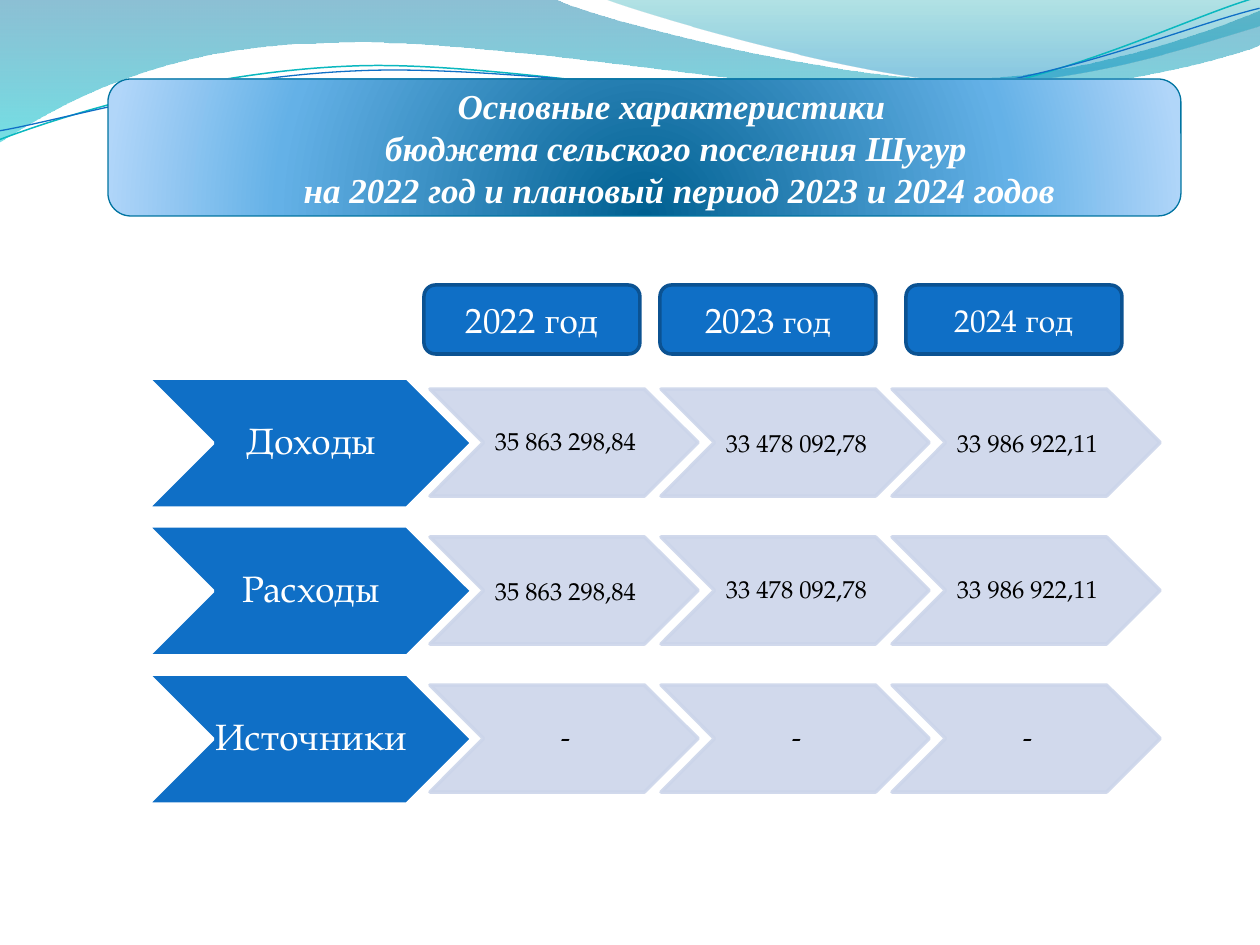
from lxml import etree
from pptx import Presentation
from pptx.dml.color import RGBColor
from pptx.enum.shapes import MSO_SHAPE
from pptx.enum.text import MSO_ANCHOR, PP_ALIGN
from pptx.oxml.ns import qn
from pptx.util import Pt

PX = 914400 / 126
CHEVRON, ROUNDED = MSO_SHAPE.CHEVRON, MSO_SHAPE.ROUNDED_RECTANGLE
CENTER, MIDDLE = PP_ALIGN.CENTER, MSO_ANCHOR.MIDDLE
BODY_FONT, TITLE_FONT = "TeX Gyre Pagella", "Times New Roman"

WHITE = RGBColor(0xFF, 0xFF, 0xFF)
BLACK = RGBColor(0x00, 0x00, 0x00)
BLUE = RGBColor(0x0F, 0x6F, 0xC6)
DARK_BLUE = RGBColor(0x0B, 0x52, 0x92)
PALE = RGBColor(0xCC, 0xD5, 0xEA)
TEAL_LINE = RGBColor(0x0A, 0xB8, 0xBF)
OCEAN = RGBColor(0x00, 0x74, 0xA1)
CYAN = RGBColor(0x00, 0xC6, 0xCF)
TEAL = RGBColor(0x00, 0xA1, 0xA9)
AZURE = RGBColor(0x00, 0x8B, 0xBF)
DEEP = RGBColor(0x00, 0x60, 0x91)
SKY = RGBColor(0x64, 0xB1, 0xE7)
MIST = RGBColor(0xB1, 0xD6, 0xF9)

# A pair of numbers is a corner; six numbers are a Bezier segment.
LARGE_WAVE = [(0, 0), (554, -1), (600, 21, 837, 79, 955, 79), (1075, 79, 1207, 33, 1260, 11),
              (1261, 45), (1239, 55, 1096, 96, 940, 95), (784, 95, 481, 35, 324, 43),
              (163, 45, 58, 105, -1, 142)]
SMALL_WAVE = [(604, -1), (641, 14, 859, 78, 969, 82), (1079, 86, 1211, 40, 1260, 26), (1260, 0)]
# The curves are laid out level and then turned by CURVE_TURN degrees.
CURVE_TURN = 357.3
TEAL_CURVE = [(-3, 110), (59, 90, 199, 52, 350, 53), (499, 53, 745, 118, 896, 114),
              (1048, 109, 1184, 45, 1260, 27)]
BLUE_CURVE = [(-2, 101), (57, 94, 207, 57, 357, 58), (509, 58, 750, 112, 902, 108),
              (1052, 104, 1188, 52, 1262, 38)]

YEARS = [(424, [("2022 год", 20)]), (660, [("2023", 20), (" год", 18)]), (906, [("2024 год", 18)])]
# Each row: label, values, text size, downward shift of each value.
ROWS = [
    ("Доходы", ["35 863 298,84", "33 478 092,78", "33 986 922,11"], 14, (0, 2, 2)),
    ("Расходы", ["35 863 298,84", "33 478 092,78", "33 986 922,11"], 14, (2, 0, 0)),
    ("Источники", ["-", "-", "-"], 16, (0, 0, 0)),
]
TITLE = [("Основные характеристики", 54), ("бюджета сельского поселения Шугур", 63),
         ("на 2022 год и плановый период 2023 и 2024 годов", 70)]


def emu(px):
    return round(px * PX)


def add_color(parent, color, alpha=100):
    element = etree.SubElement(parent, qn("a:srgbClr"), val=str(color))
    if alpha < 100:
        etree.SubElement(element, qn("a:alpha"), val=str(alpha * 1000))


def fill_gradient(shape, stops):
    """Set (position, colour, opacity) stops and return the gradient element."""
    shape.fill.gradient()
    gradient = shape._element.spPr.find(qn("a:gradFill"))
    for child in list(gradient):
        gradient.remove(child)
    stop_list = etree.SubElement(gradient, qn("a:gsLst"))
    for position, color, alpha in stops:
        stop = etree.SubElement(stop_list, qn("a:gs"), pos=str(position * 1000))
        add_color(stop, color, alpha)
    return gradient


def add_outline(page, segments, closed):
    """Draw straight segments, then join each Bezier triple into one curve."""
    points = [(emu(segment[i]), emu(segment[i + 1]))
              for segment in segments for i in range(0, len(segment), 2)]
    builder = page.shapes.build_freeform(*points[0])
    builder.add_line_segments(points[1:], close=closed)
    shape = builder.convert_to_shape()
    shape.shadow.inherit = False
    lines = iter(list(shape._element.iter(qn("a:lnTo"))))
    for segment in segments[1:]:
        first = next(lines)
        if len(segment) == 6:
            curve = etree.Element(qn("a:cubicBezTo"))
            first.addprevious(curve)
            for line in (first, next(lines), next(lines)):
                curve.append(line[0])
                line.getparent().remove(line)
    return shape


def add_waves(page):
    for segments, stops in (
        (LARGE_WAVE, [(0, OCEAN, 45), (100, CYAN, 55)]),
        (SMALL_WAVE, [(0, TEAL, 30), (80, AZURE, 45)]),
    ):
        wave = add_outline(page, segments, True)
        wave.line.fill.background()
        gradient = fill_gradient(wave, stops)
        etree.SubElement(gradient, qn("a:lin"), ang="5400000", scaled="0")
    for segments, color, width in ((TEAL_CURVE, TEAL_LINE, 0.85), (BLUE_CURVE, BLUE, 0.75)):
        curve = add_outline(page, segments, False)
        curve.rotation = CURVE_TURN
        curve.fill.background()
        curve.line.color.rgb = color
        curve.line.width = Pt(width)


def add_box(page, kind, box, fill, line, width=2):
    shape = page.shapes.add_shape(kind, *map(emu, box))
    shape.shadow.inherit = False
    if fill is not None:
        shape.fill.solid()
        shape.fill.fore_color.rgb = fill
    shape.line.color.rgb = line
    shape.line.width = Pt(width)
    shape.text_frame.vertical_anchor = MIDDLE
    return shape


def write(para, spans, color):
    para.alignment = CENTER
    para.font.name = BODY_FONT
    para.font.color.rgb = color
    for text, size in spans:
        span = para.add_run()
        span.text = text
        span.font.size = Pt(size)


def add_chevron(page, box, text, size, fill, line, color, shift=0):
    shape = add_box(page, CHEVRON, box, fill, line)
    frame = shape.text_frame
    frame.word_wrap = False
    frame.margin_left = emu(3)
    frame.margin_right = 0
    frame.margin_top = emu(1 + 2 * shift)
    frame.margin_bottom = emu(1)
    write(frame.paragraphs[0], [(text, size)], color)
    frame.paragraphs[0].line_spacing = 0.9
    return shape


def add_row(page, left, top, label, values, size, shifts):
    add_chevron(page, (left, top, 324, 130), label, 21, BLUE, WHITE, WHITE)
    for column, (value, shift) in enumerate(zip(values, shifts)):
        box = (left + 282 + 231 * column, top + 11, 268, 107)
        shape = add_chevron(page, box, value, size, PALE, PALE, BLACK, shift)
        for color in shape._element.spPr.iter(qn("a:srgbClr")):
            etree.SubElement(color, qn("a:alpha"), val="90000")


def add_years(page, top):
    for left, spans in YEARS:
        shape = add_box(page, ROUNDED, (left, top, 216, 69), BLUE, DARK_BLUE)
        write(shape.text_frame.paragraphs[0], spans, WHITE)


def add_title(page, box):
    shape = add_box(page, ROUNDED, box, None, OCEAN, 0.75)
    gradient = fill_gradient(shape, [(0, DEEP, 100), (68, SKY, 100), (100, MIST, 100)])
    circle = etree.SubElement(gradient, qn("a:path"), path="circle")
    etree.SubElement(circle, qn("a:fillToRect"), l="50000", t="130000", r="50000", b="-30000")
    frame = shape.text_frame
    for index, (text, indent) in enumerate(TITLE):
        para = frame.add_paragraph() if index else frame.paragraphs[0]
        para.text = text
        para.alignment = CENTER
        para._p.get_or_add_pPr().set("indent", str(emu(indent)))
        font = para.font
        font.name, font.size, font.bold, font.italic = TITLE_FONT, Pt(20), True, True
        font.color.rgb = WHITE


def main():
    deck = Presentation()
    deck.slide_width, deck.slide_height = emu(1260), emu(945)
    page = deck.slides.add_slide(deck.slide_layouts[6])
    add_waves(page)
    for index, row in enumerate(ROWS):
        add_row(page, 148, 378 + 148 * index, *row)
    add_years(page, 285)
    add_title(page, (108, 79, 1073, 137))
    deck.save("out.pptx")


if __name__ == "__main__":
    main()
